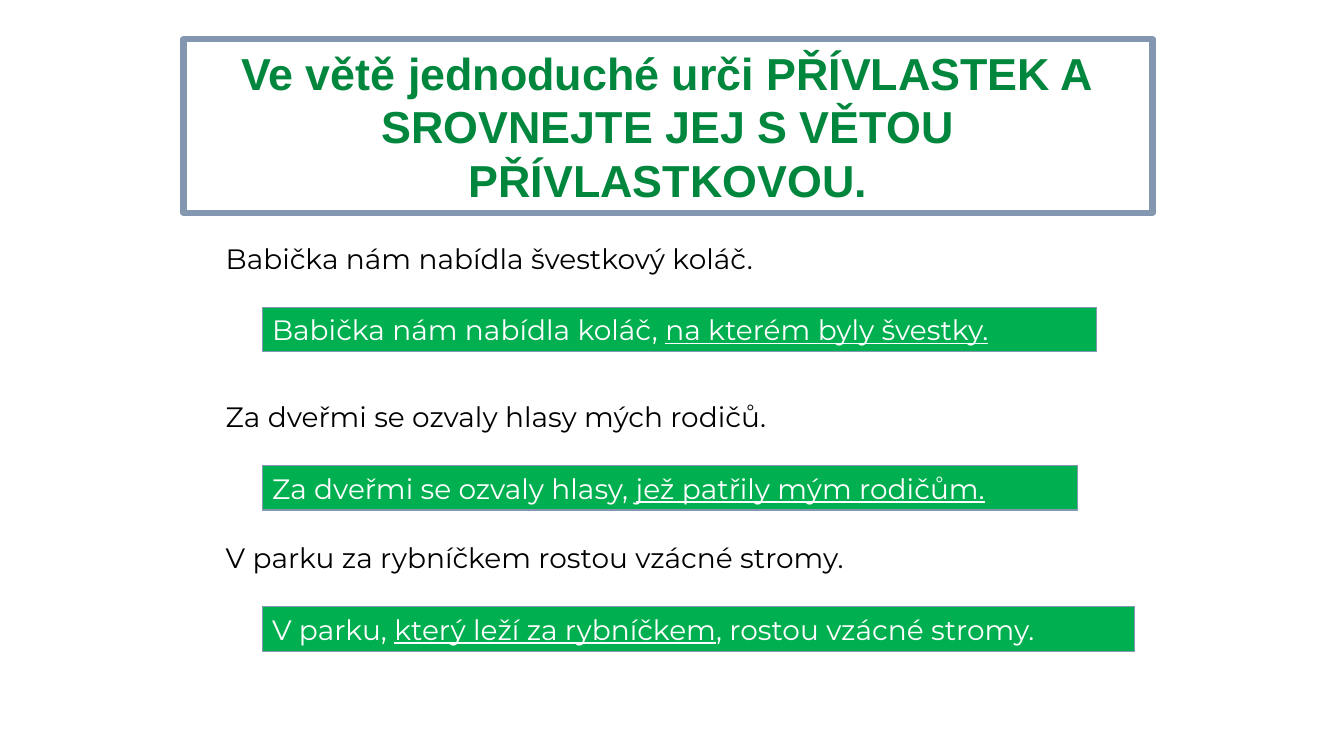
from pptx import Presentation
from pptx.dml.color import RGBColor
from pptx.enum.shapes import MSO_SHAPE
from pptx.enum.text import MSO_ANCHOR, MSO_AUTO_SIZE, PP_ALIGN
from pptx.util import Inches, Pt

TITLE_GREEN = RGBColor(0x00, 0x86, 0x3D)
BOX_GREEN = RGBColor(0x00, 0xB0, 0x50)
BORDER_BLUE = RGBColor(0x84, 0x97, 0xB0)
BLACK = RGBColor(0x00, 0x00, 0x00)
WHITE = RGBColor(0xFF, 0xFF, 0xFF)

TITLE_LINES = [
    "Ve větě jednoduché urči PŘÍVLASTEK A",
    "SROVNEJTE JEJ S VĚTOU PŘÍVLASTKOVOU.",
]
ROW_HEIGHT = 0.44
ANSWER_OFFSET = 0.71
EXERCISES = [
    (2.34, 6.24, "Babička nám nabídla švestkový koláč.",
     8.28, ("Babička nám nabídla koláč, ", "na kterém byly švestky.")),
    (3.91, 6.32, "Za dveřmi se ozvaly hlasy mých rodičů.",
     8.09, ("Za dveřmi se ozvaly hlasy, ", "jež patřily mým rodičům.")),
    (5.31, 6.95, "V parku za rybníčkem rostou vzácné stromy.",
     8.65, ("V parku, ", "který leží za rybníčkem", ", rostou vzácné stromy.")),
]


class ExerciseSlide:
    title_font = "Arial"
    body_font = "Montserrat"
    title_size = Pt(32)
    body_size = Pt(20)

    def __init__(self, presentation):
        self.slide = presentation.slides.add_slide(presentation.slide_layouts[5])

    def format_run(self, run, name, size, color):
        run.font.name = name
        run.font.size = size
        run.font.color.rgb = color

    def prepare_frame(self, shape):
        text_frame = shape.text_frame
        text_frame.word_wrap = True
        text_frame.auto_size = MSO_AUTO_SIZE.NONE
        text_frame.vertical_anchor = MSO_ANCHOR.MIDDLE
        return text_frame

    def set_border(self, shape, width):
        shape.line.color.rgb = BORDER_BLUE
        shape.line.width = Pt(width)

    def title(self, lines, left, top, width, height):
        shape = self.slide.shapes.title
        shape.left, shape.top = Inches(left), Inches(top)
        shape.width, shape.height = Inches(width), Inches(height)
        self.set_border(shape, 4.5)
        text_frame = self.prepare_frame(shape)
        text_frame.text = "\n".join(lines)
        for paragraph in text_frame.paragraphs:
            paragraph.alignment = PP_ALIGN.CENTER
            for run in paragraph.runs:
                self.format_run(run, self.title_font, self.title_size, TITLE_GREEN)
                run.font.bold = True

    def sentence(self, text, left, top, width):
        shape = self.slide.shapes.add_textbox(
            Inches(left), Inches(top), Inches(width), Inches(ROW_HEIGHT))
        text_frame = self.prepare_frame(shape)
        text_frame.text = text
        self.format_run(text_frame.paragraphs[0].runs[0],
                        self.body_font, self.body_size, BLACK)

    def answer(self, parts, left, top, width):
        shape = self.slide.shapes.add_shape(
            MSO_SHAPE.RECTANGLE,
            Inches(left), Inches(top), Inches(width), Inches(ROW_HEIGHT))
        shape.shadow.inherit = False
        shape.fill.solid()
        shape.fill.fore_color.rgb = BOX_GREEN
        self.set_border(shape, 0.75)
        paragraph = self.prepare_frame(shape).paragraphs[0]
        paragraph.alignment = PP_ALIGN.LEFT
        for index, part in enumerate(parts):
            run = paragraph.add_run()
            run.text = part
            self.format_run(run, self.body_font, self.body_size, WHITE)
            run.font.underline = index == 1


def main():
    presentation = Presentation()
    presentation.slide_width = Inches(13.33)
    presentation.slide_height = Inches(7.5)
    exercise_slide = ExerciseSlide(presentation)
    exercise_slide.title(TITLE_LINES, 1.82, 0.39, 9.61, 1.72)
    for top, sentence_width, sentence, answer_width, parts in EXERCISES:
        exercise_slide.sentence(sentence, 2.14, top, sentence_width)
        exercise_slide.answer(parts, 2.6, top + ANSWER_OFFSET, answer_width)
    presentation.save("out.pptx")


if __name__ == "__main__":
    main()
